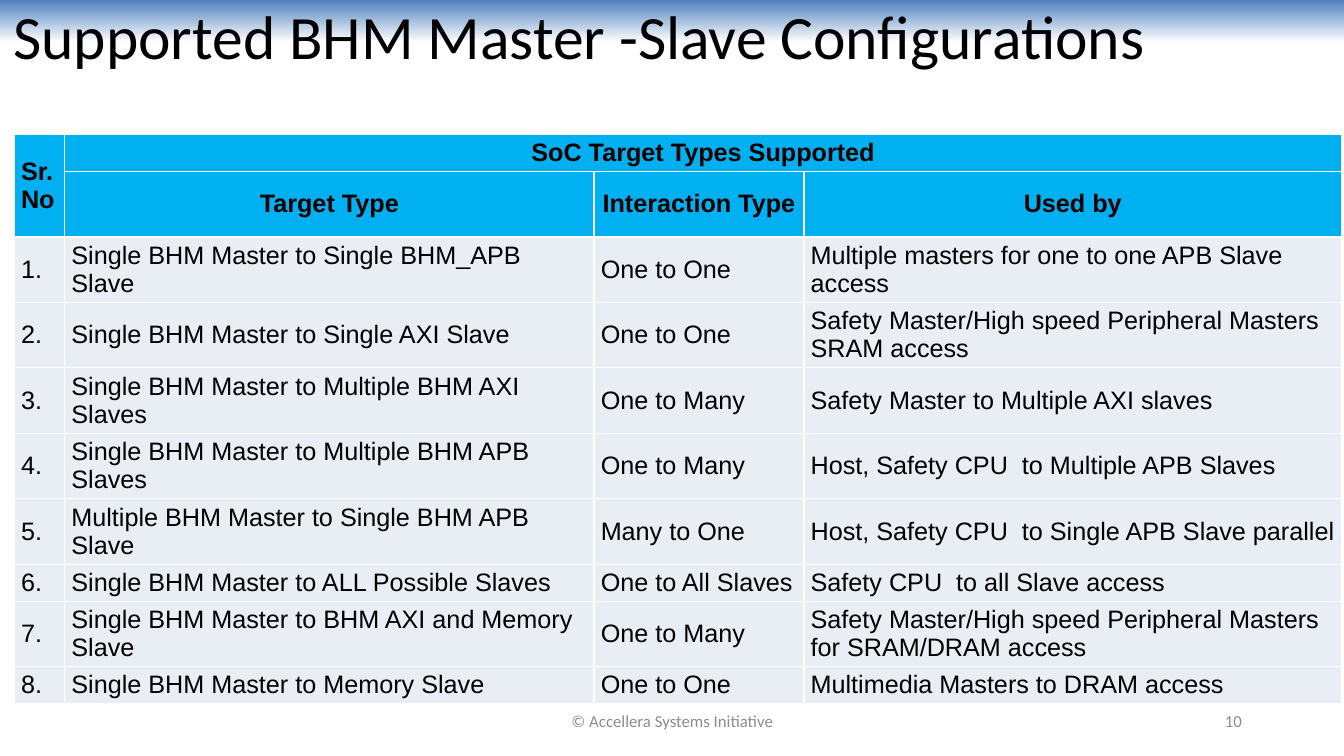
from dataclasses import dataclass

from lxml.etree import SubElement
from pptx import Presentation
from pptx.dml.color import RGBColor
from pptx.enum.shapes import MSO_SHAPE as Shape
from pptx.enum.text import MSO_ANCHOR as Anchor, MSO_AUTO_SIZE as AutoSize, PP_ALIGN as Align
from pptx.oxml.ns import qn
from pptx.slide import Slide
from pptx.table import Table
from pptx.util import Cm, Pt

HEADER_FILL, BODY_FILL = "00B0F0", "E9EDF4"
BLACK, WHITE, GREY, BLUE = "000000", "FFFFFF", "8C8C8C", "4F81BD"
COLUMN_WIDTHS = (1.27, 13.34, 5.29, 13.55)
SHORT_ROW, TALL_ROW = 0.93, 1.65


@dataclass
class Configuration:
    target: str
    interaction: str
    used_by: str
    height: float = TALL_ROW


@dataclass
class FooterItem:
    text: str
    left: float
    width: float
    align: Align


CONFIGURATIONS = [
    Configuration("Single BHM Master to Single BHM_APB Slave", "One to One",
                  "Multiple masters for one to one APB Slave access"),
    Configuration("Single BHM Master to Single AXI Slave", "One to One",
                  "Safety Master/High speed Peripheral Masters SRAM access"),
    Configuration("Single BHM Master to Multiple BHM AXI Slaves", "One to Many",
                  "Safety Master to Multiple AXI slaves"),
    Configuration("Single BHM Master to Multiple BHM APB Slaves", "One to Many",
                  "Host, Safety CPU  to Multiple APB Slaves"),
    Configuration("Multiple BHM Master to Single BHM APB Slave", "Many to One",
                  "Host, Safety CPU  to Single APB Slave parallel"),
    Configuration("Single BHM Master to ALL Possible Slaves", "One to All Slaves",
                  "Safety CPU  to all Slave access", SHORT_ROW),
    Configuration("Single BHM Master to BHM AXI and Memory Slave", "One to Many",
                  "Safety Master/High speed Peripheral Masters for SRAM/DRAM access"),
    Configuration("Single BHM Master to Memory Slave", "One to One",
                  "Multimedia Masters to DRAM access", SHORT_ROW),
]
FOOTER = [
    FooterItem("© Accellera Systems Initiative", 11.23, 11.43, Align.CENTER),
    FooterItem("10", 23.93, 7.62, Align.RIGHT),
]


def rgb(value: str) -> RGBColor:
    return RGBColor.from_string(value)


def format_text(text_frame, font_name: str, size: float, color: str,
                align: Align = Align.LEFT, bold: bool = False) -> None:
    for paragraph in text_frame.paragraphs:
        paragraph.alignment = align
        for run in paragraph.runs:
            run.font.name = font_name
            run.font.size = Pt(size)
            run.font.bold = bold
            run.font.color.rgb = rgb(color)


def add_band(slide: Slide, width: int) -> None:
    band = slide.shapes.add_shape(Shape.RECTANGLE, 0, 0, width, Cm(1.07))
    band.shadow.inherit = False
    band.line.fill.background()
    band.fill.gradient()
    band.fill.gradient_angle = 270
    for stop, color, position in zip(band.fill.gradient_stops, (BLUE, WHITE), (0, 1)):
        stop.color.rgb = rgb(color)
        stop.position = position
    slide.shapes.title.element.addprevious(band.element)


def format_title(slide: Slide) -> None:
    title = slide.shapes.title
    title.left, title.top, title.width, title.height = Cm(0.08), Cm(-0.03), Cm(29.21), Cm(2.03)
    frame = title.text_frame
    frame.text = "Supported BHM Master -Slave Configurations"
    frame.auto_size = AutoSize.NONE
    frame.vertical_anchor = Anchor.MIDDLE
    frame.paragraphs[0].line_spacing = 0.9
    format_text(frame, "Calibri", 44, BLACK)


def format_cell(table: Table, row: int, column: int, text: str) -> None:
    cell = table.cell(row, column)
    is_header = row < 2
    cell.text = text
    cell.vertical_anchor = Anchor.MIDDLE
    cell.margin_left = cell.margin_right = Cm(0.17)
    cell.margin_top = cell.margin_bottom = Cm(0.1)
    centered = is_header and column > 0
    format_text(cell.text_frame, "Arial", 18, BLACK,
                Align.CENTER if centered else Align.LEFT, is_header)
    # White borders come before the fill in the cell properties
    properties = cell._tc.get_or_add_tcPr()
    for side in ("lnL", "lnR", "lnT", "lnB"):
        border = SubElement(properties, qn(f"a:{side}"), w=str(Pt(1)))
        SubElement(SubElement(border, qn("a:solidFill")), qn("a:srgbClr"), val=WHITE)
    cell.fill.solid()
    cell.fill.fore_color.rgb = rgb(HEADER_FILL if is_header else BODY_FILL)


def add_configuration_table(slide: Slide) -> None:
    rows = [("Sr.\nNo", "SoC Target Types Supported", "", ""),
            ("", "Target Type", "Interaction Type", "Used by")]
    rows += [(f"{number}.", item.target, item.interaction, item.used_by)
             for number, item in enumerate(CONFIGURATIONS, 1)]
    heights = [SHORT_ROW, TALL_ROW] + [item.height for item in CONFIGURATIONS]
    table = slide.shapes.add_table(len(rows), len(COLUMN_WIDTHS), Cm(0.36), Cm(3.39),
                                   Cm(sum(COLUMN_WIDTHS)), Cm(sum(heights))).table
    for column, width in zip(table.columns, COLUMN_WIDTHS):
        column.width = Cm(width)
    for row_index, (texts, height) in enumerate(zip(rows, heights)):
        table.rows[row_index].height = Cm(height)
        for column_index, text in enumerate(texts):
            format_cell(table, row_index, column_index, text)
    table.cell(0, 0).merge(table.cell(1, 0))
    table.cell(0, 1).merge(table.cell(0, 3))


def add_footer_item(slide: Slide, item: FooterItem) -> None:
    box = slide.shapes.add_textbox(Cm(item.left), Cm(17.65), Cm(item.width), Cm(1.02))
    frame = box.text_frame
    frame.word_wrap = True
    frame.vertical_anchor = Anchor.MIDDLE
    frame.text = item.text
    format_text(frame, "Calibri", 12, GREY, item.align)


def main() -> None:
    presentation = Presentation()
    presentation.slide_width, presentation.slide_height = Cm(33.87), Cm(19.05)
    slide = presentation.slides.add_slide(presentation.slide_layouts.get_by_name("Title Only"))
    # Heading
    format_title(slide)
    add_band(slide, presentation.slide_width)
    # Table and footer
    add_configuration_table(slide)
    for item in FOOTER:
        add_footer_item(slide, item)
    presentation.save("out.pptx")


if __name__ == "__main__":
    main()
